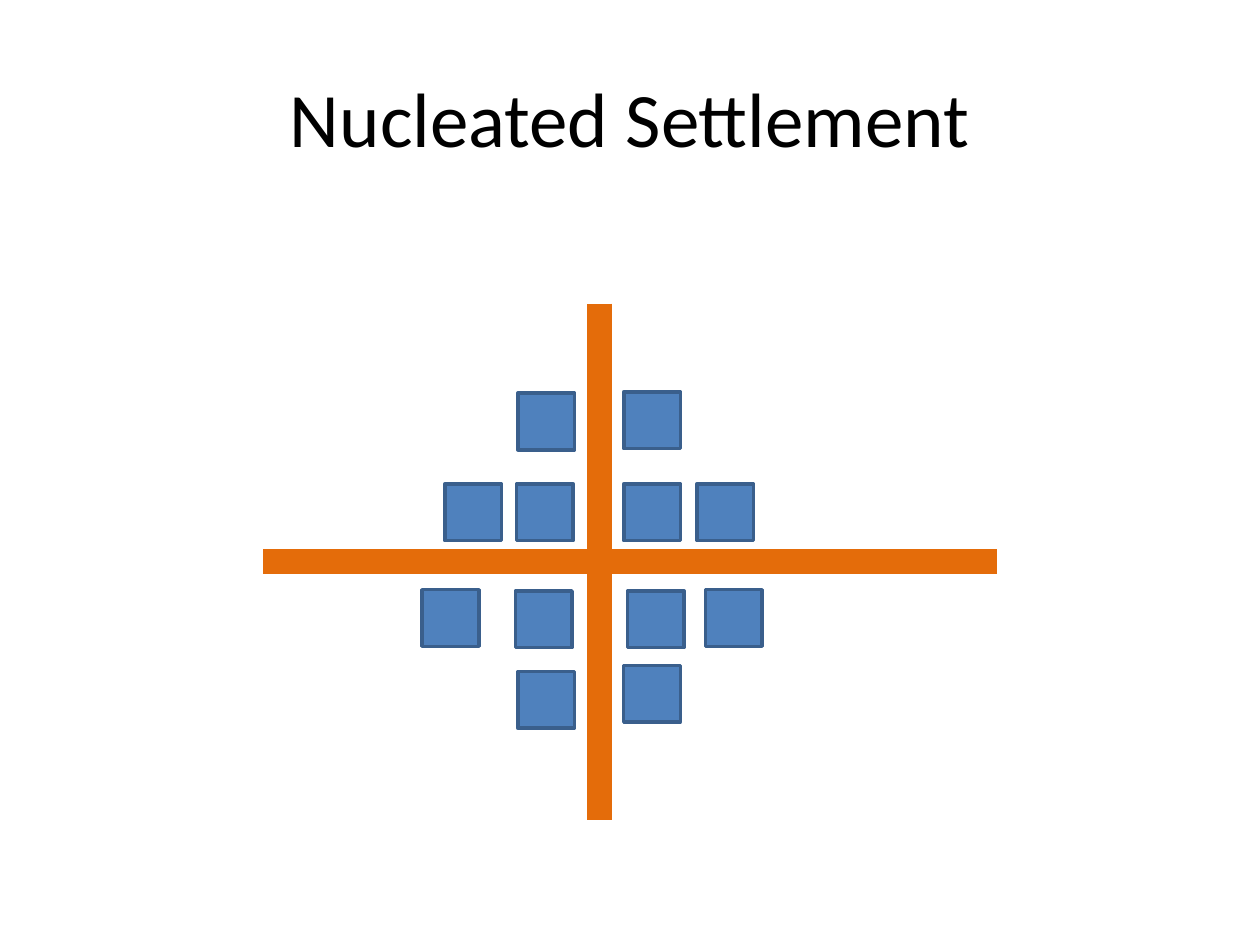
from dataclasses import dataclass

import pptx
import pptx.dml.color
import pptx.enum.shapes
import pptx.enum.text
import pptx.oxml.ns
import pptx.util
from lxml import etree
from pptx.util import Inches, Pt


@dataclass(frozen=True)
class Theme:
    font: str = "Calibri"
    title_size: float = 44
    text: str = "000000"
    road: str = "E46C0A"
    road_width: float = 14.25
    house: str = "4F81BD"
    house_edge: str = "3A5F8C"
    house_edge_width: float = 2


THEME = Theme()
HOUSE_SIZE = 0.45
ROADS = [((2.09, 4.46), (7.91, 4.46)), ((4.76, 2.41), (4.76, 6.51))]
UPPER_LEFT_HOUSES = [(4.1, 3.84), (3.53, 3.84), (4.11, 3.12)]
UPPER_RIGHT_HOUSES = [(5.53, 3.84), (4.95, 3.84), (4.95, 3.11)]
LOWER_HOUSES = [(4.11, 5.33), (3.35, 4.68), (4.09, 4.69),
                (4.98, 4.69), (4.95, 5.28), (5.6, 4.68)]


def color(code):
    return pptx.dml.color.RGBColor.from_string(code)


def set_title(slide, text):
    title = slide.shapes.title
    title.left, title.top = Inches(0.5), Inches(0.3)
    title.width, title.height = Inches(9), Inches(1.25)
    title.text_frame.vertical_anchor = pptx.enum.text.MSO_ANCHOR.MIDDLE
    title.text_frame.text = text
    para = title.text_frame.paragraphs[0]
    para.alignment = pptx.enum.text.PP_ALIGN.CENTER
    para.font.name = THEME.font
    para.font.size = Pt(THEME.title_size)
    para.font.color.rgb = color(THEME.text)


def add_road(slide, start, end):
    road = slide.shapes.add_connector(
        pptx.enum.shapes.MSO_CONNECTOR.STRAIGHT,
        *(Inches(value) for value in start + end))
    road.line.color.rgb = color(THEME.road)
    road.line.width = Pt(THEME.road_width)
    etree.SubElement(road._element.spPr, pptx.oxml.ns.qn("a:effectLst"))


def add_house(slide, left, top, rotation=0):
    house = slide.shapes.add_shape(
        pptx.enum.shapes.MSO_SHAPE.RECTANGLE, Inches(left), Inches(top),
        Inches(HOUSE_SIZE), Inches(HOUSE_SIZE))
    house.rotation = rotation
    house.shadow.inherit = False
    house.fill.solid()
    house.fill.fore_color.rgb = color(THEME.house)
    house.line.color.rgb = color(THEME.house_edge)
    house.line.width = Pt(THEME.house_edge_width)


def main():
    deck = pptx.Presentation()
    deck.slide_width, deck.slide_height = Inches(10), Inches(7.5)
    slide = deck.slides.add_slide(deck.slide_layouts.get_by_name("Title Only"))
    set_title(slide, "Nucleated Settlement")
    for start, end in ROADS:
        add_road(slide, start, end)
    for houses, rotation in ((UPPER_LEFT_HOUSES, 0),
                             (UPPER_RIGHT_HOUSES, 90),
                             (LOWER_HOUSES, 0)):
        for left, top in houses:
            add_house(slide, left, top, rotation)
    deck.save("out.pptx")


if __name__ == "__main__":
    main()
